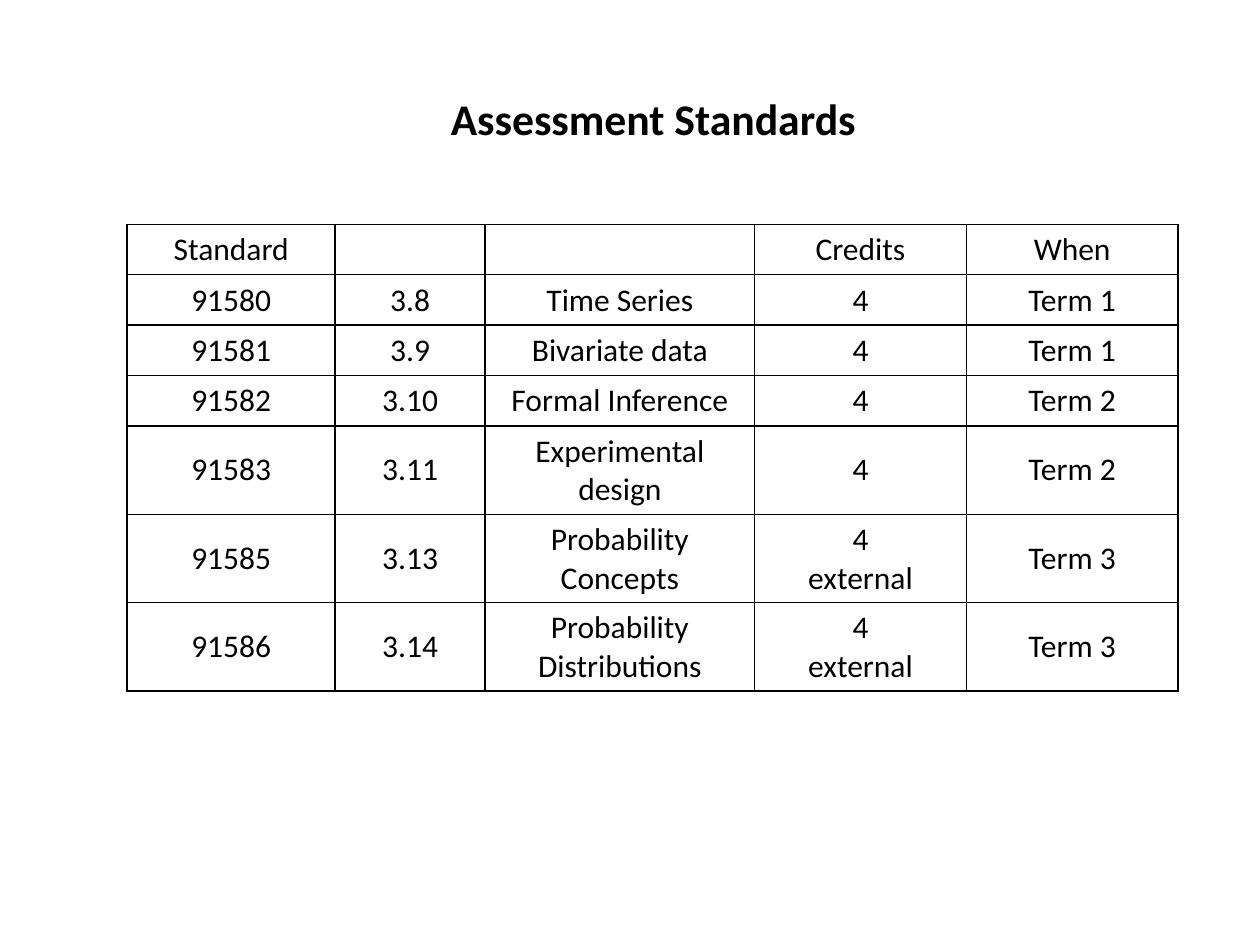
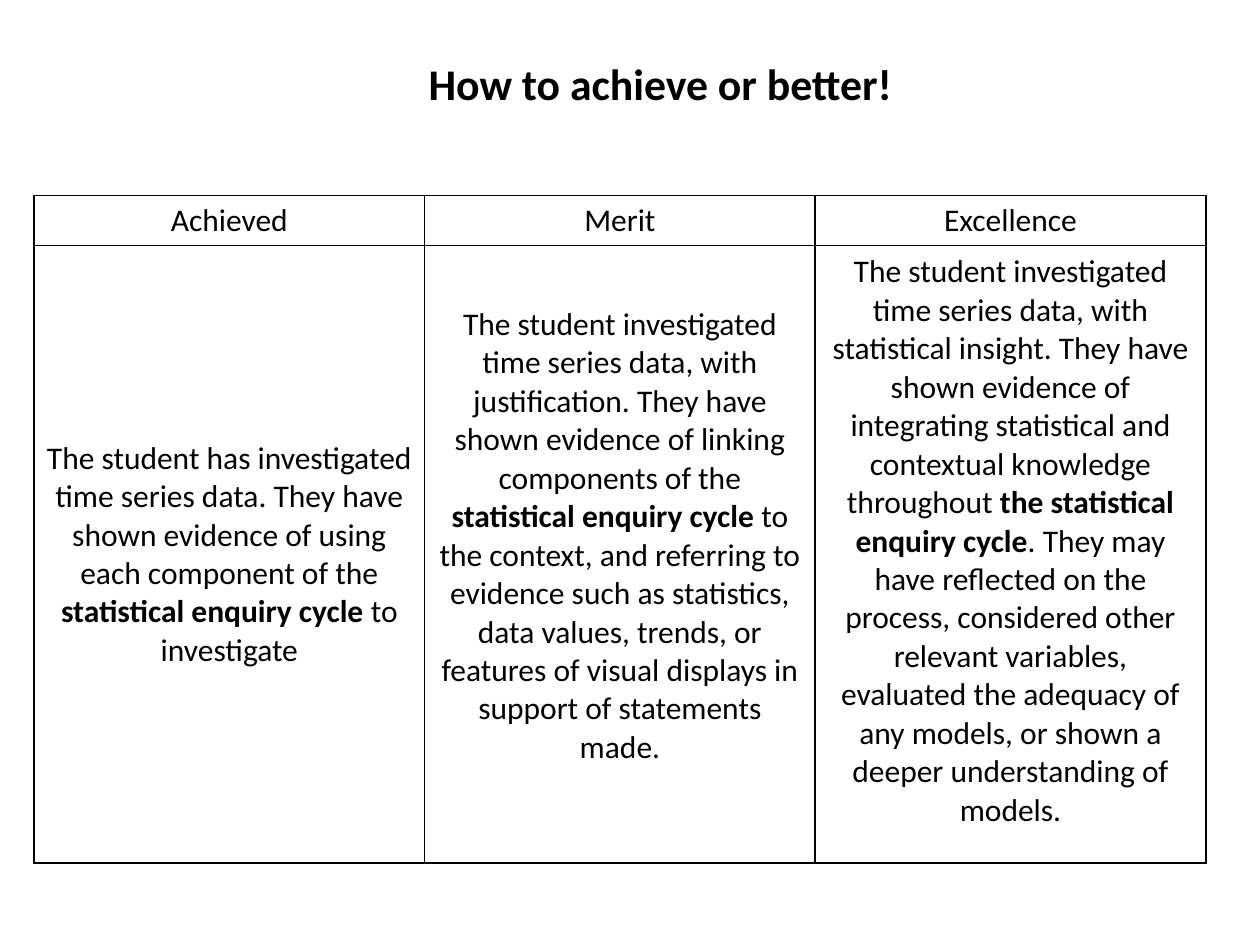
from lxml import etree
from pptx import Presentation
from pptx.dml.color import RGBColor
from pptx.enum.text import MSO_ANCHOR, MSO_AUTO_SIZE, PP_ALIGN
from pptx.oxml.ns import qn
from pptx.util import Inches, Pt

CENTER = PP_ALIGN.CENTER
MIDDLE = MSO_ANCHOR.MIDDLE
GROW = MSO_AUTO_SIZE.SHAPE_TO_FIT_TEXT
FONT = "Calibri"
INK = "000000"
PAPER = "FFFFFF"
TITLE_ONLY = 5
BOLD_MARK = "**"
ROW_HEIGHT = 0.4
TWO_LINE_HEIGHT = 0.7

STANDARDS = [
    ["Standard", "", "", "Credits", "When"],
    ["91580", "3.8", "Time Series", "4", "Term 1"],
    ["91581", "3.9", "Bivariate data", "4", "Term 1"],
    ["91582", "3.10", "Formal Inference", "4", "Term 2"],
    ["91583", "3.11", "Experimental design", "4", "Term 2"],
    ["91585", "3.13", "Probability Concepts", "4\nexternal", "Term 3"],
    ["91586", "3.14", "Probability Distributions", "4\nexternal", "Term 3"],
]

GRADES = [
    ["Achieved", "Merit", "Excellence"],
    [
        "The student has investigated time series data. They have shown evidence "
        "of using each component of the **statistical enquiry cycle** to investigate",
        "The student investigated time series data, with justification. They have "
        "shown evidence of linking components of the **statistical enquiry cycle** "
        "to the context, and referring to evidence such as statistics, data values, "
        "trends, or features of visual displays in support of statements made.",
        "The student investigated time series data, with statistical insight. They "
        "have shown evidence of integrating statistical and contextual knowledge "
        "throughout **the statistical enquiry cycle**. They may have reflected on "
        "the process, considered other relevant variables, evaluated the adequacy "
        "of any models, or shown a deeper understanding of models.",
    ],
]


def color(value):
    """Turn a hex string into a colour."""
    return RGBColor.from_string(value)


def format_paragraph(para, size, bold=False):
    """Centre a paragraph and set its font."""
    para.alignment = CENTER
    para.font.name = FONT
    para.font.size = Pt(size)
    para.font.bold = bold
    para.font.color.rgb = color(INK)


def add_titled_page(deck, title, box):
    """Add a page with a bold title in the given box."""
    page = deck.slides.add_slide(deck.slide_layouts[TITLE_ONLY])
    heading = page.shapes.title
    heading.left, heading.top, heading.width, heading.height = map(Inches, box)
    frame = heading.text_frame
    frame.text = title
    frame.word_wrap = True
    frame.auto_size = GROW
    format_paragraph(frame.paragraphs[0], 25, True)
    return page


def draw_borders(cell):
    """Rule all four sides of a cell."""
    properties = cell._tc.get_or_add_tcPr()
    for side in ("lnL", "lnR", "lnT", "lnB"):
        line = etree.SubElement(properties, qn(f"a:{side}"), w=str(Pt(1)))
        fill = etree.SubElement(line, qn("a:solidFill"))
        etree.SubElement(fill, qn("a:srgbClr"), val=INK)


def fill_cell(cell, text):
    """Style a cell and write its text, with marked words in bold."""
    draw_borders(cell)
    cell.fill.solid()
    cell.fill.fore_color.rgb = color(PAPER)
    cell.vertical_anchor = MIDDLE
    frame = cell.text_frame
    for index, line in enumerate(text.split("\n")):
        para = frame.add_paragraph() if index else frame.paragraphs[0]
        format_paragraph(para, 18)
        for position, part in enumerate(line.split(BOLD_MARK)):
            if part:
                span = para.add_run()
                span.text = part
                if position % 2:
                    span.font.bold = True


def add_grid(page, left, top, widths, heights, rows):
    """Add a ruled table at the given corner."""
    frame = page.shapes.add_table(
        len(heights), len(widths), Inches(left), Inches(top),
        Inches(sum(widths)), Inches(sum(heights)))
    table = frame.table
    table.first_row = False
    table.horz_banding = False
    for column, width in zip(table.columns, widths):
        column.width = Inches(width)
    for row, height, texts in zip(table.rows, heights, rows):
        row.height = Inches(height)
        for cell, text in zip(row.cells, texts):
            fill_cell(cell, text)
    return table


def add_standards_page(deck):
    """Add the page that lists the assessment standards."""
    page = add_titled_page(deck, "Assessment Standards", (1.01, 0.68, 8.35, 0.52))
    heights = [ROW_HEIGHT] * 4 + [TWO_LINE_HEIGHT] * 3
    add_grid(page, 1.01, 1.78, [1.65, 1.19, 2.14, 1.68, 1.68], heights, STANDARDS)


def add_grades_page(deck):
    """Add the page that explains the three grades."""
    page = add_titled_page(deck, "How to achieve or better!", (0.91, 0.4, 8.66, 0.52))
    table = add_grid(page, 0.27, 1.55, [3.1] * 3, [ROW_HEIGHT, 4.9], GRADES)
    for column, margin in enumerate((0.05, 0.34, 0.26)):
        table.cell(1, column).margin_bottom = Inches(margin)


def main():
    """Build and save the deck."""
    deck = Presentation()
    deck.slide_width = Inches(10)
    deck.slide_height = Inches(7.5)
    add_standards_page(deck)
    add_grades_page(deck)
    deck.save("out.pptx")


if __name__ == "__main__":
    main()
